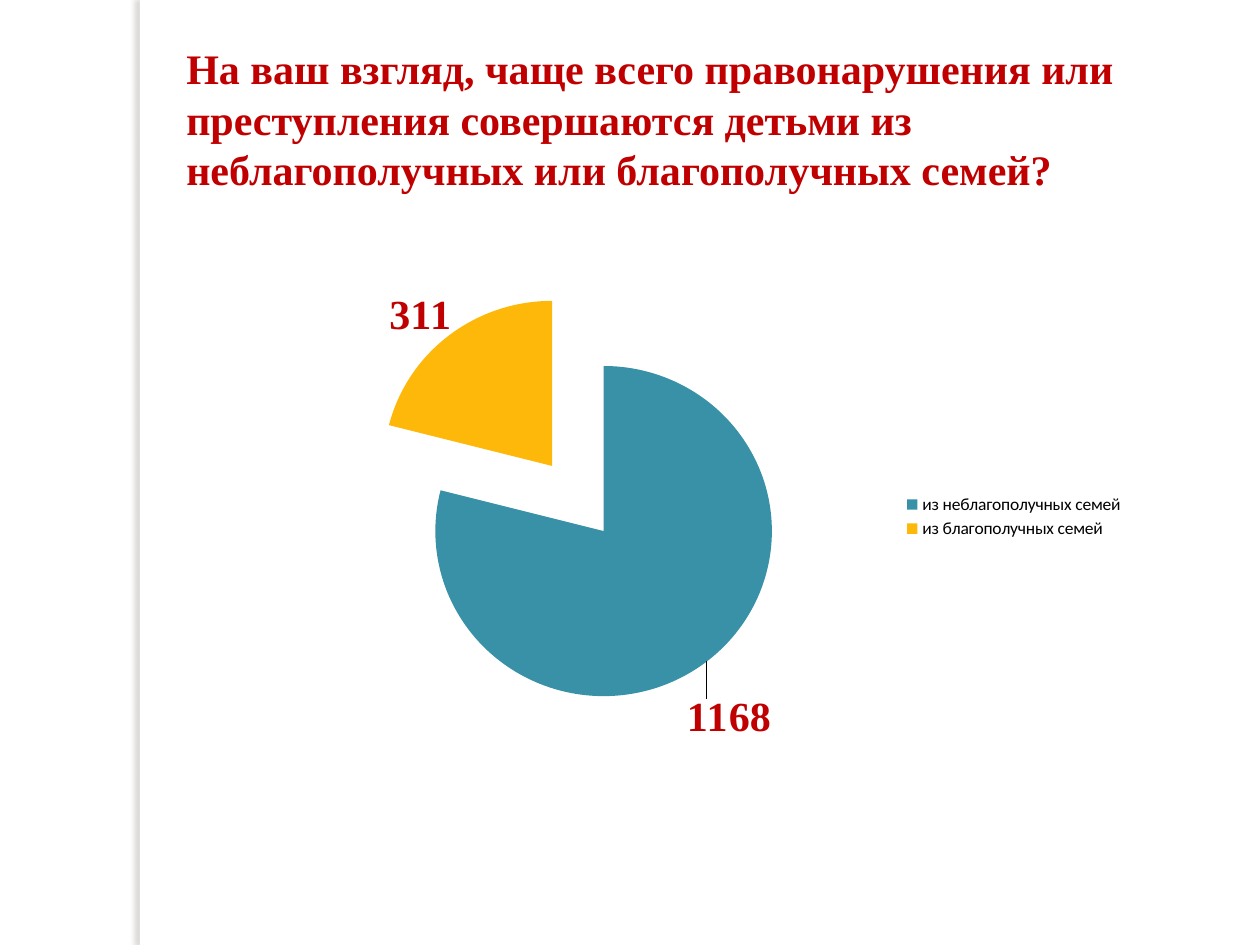
"""Build a survey slide with a question and an exploded pie chart."""
from lxml import etree
from pptx import Presentation
from pptx.chart.data import CategoryChartData
from pptx.dml.color import RGBColor
from pptx.enum.chart import XL_CHART_TYPE as ChartType, XL_LABEL_POSITION as LabelPos, XL_LEGEND_POSITION as LegendPos
from pptx.enum.shapes import MSO_SHAPE as Shape
from pptx.oxml import parse_xml
from pptx.oxml.ns import nsdecls, qn
from pptx.util import Inches, Pt


def rgb(value):
    return RGBColor.from_string(value)


def manual_layout(**values):
    layout = etree.Element(qn("c:layout"))
    manual = etree.SubElement(layout, qn("c:manualLayout"))
    for tag, value in values.items():
        etree.SubElement(manual, qn(f"c:{tag}")).set("val", str(value))
    return layout


prs = Presentation()
prs.slide_width, prs.slide_height = Inches(10), Inches(7.5)
s = prs.slides.add_slide(prs.slide_layouts[6])

bar = s.shapes.add_shape(Shape.RECTANGLE, Inches(1.11), 0, Inches(0.08), Inches(7.5))
bar.fill.solid()
bar.fill.fore_color.rgb = rgb("FFFFFF")
bar.line.fill.background()
bar._element.spPr.append(parse_xml(
    f'<a:effectLst {nsdecls("a")}><a:outerShdw blurRad="{Pt(3)}" dist="{Pt(3)}" dir="10800000" '
    'algn="tl" rotWithShape="0"><a:srgbClr val="736F63"><a:alpha val="25000"/></a:srgbClr>'
    '</a:outerShdw></a:effectLst>'))

title = s.shapes.add_textbox(Inches(1.38), Inches(0.29), Inches(8.58), Inches(1.31))
tf = title.text_frame
tf.word_wrap = True
p = tf.paragraphs[0]
p.text = ("На ваш взгляд, чаще всего правонарушения или преступления совершаются "
          "детьми из неблагополучных или благополучных семей?")
p.font.name, p.font.size, p.font.bold = "Times New Roman", Pt(24), True
p.font.color.rgb = rgb("C00000")

data = CategoryChartData()
data.categories = ["из неблагополучных семей", "из благополучных семей"]
data.add_series("Series 1", [1168, 311])
chart = s.shapes.add_chart(ChartType.PIE, Inches(2.5), Inches(2.25), Inches(6.52), Inches(3.63), data).chart
chart.has_title = False
chart.font.name, chart.font.size = "Calibri", Pt(10)
chart.font.color.rgb = rgb("000000")
chart.has_legend = True
chart.legend.position = LegendPos.RIGHT
chart.legend.include_in_layout = False

plot_area = chart._chartSpace.chart.plotArea
for old in plot_area.findall(qn("c:layout")):
    plot_area.remove(old)
plot_area.insert(0, manual_layout(layoutTarget="inner", xMode="edge", yMode="edge", x=0, y=0, w=0.64, h=0.92))

series = chart.plots[0].series[0]
explosion = etree.Element(qn("c:explosion"))
explosion.set("val", "25")
series._element.find(qn("c:tx")).addnext(explosion)

for i, (color, dx, dy) in enumerate([("3891A7", -0.03, 0.07), ("FEB80A", 0.01, 0.01)]):
    point = series.points[i]
    point.format.fill.solid()
    point.format.fill.fore_color.rgb = rgb(color)
    label = point.data_label
    label.position = LabelPos.OUTSIDE_END
    label.font.name, label.font.size, label.font.bold = "Times New Roman", Pt(24), True
    label.font.color.rgb = rgb("C00000")
    idx = series._element.findall(f".//{qn('c:dLbl')}/{qn('c:idx')}")[i]
    idx.addnext(manual_layout(x=dx, y=dy))

prs.save("out.pptx")
